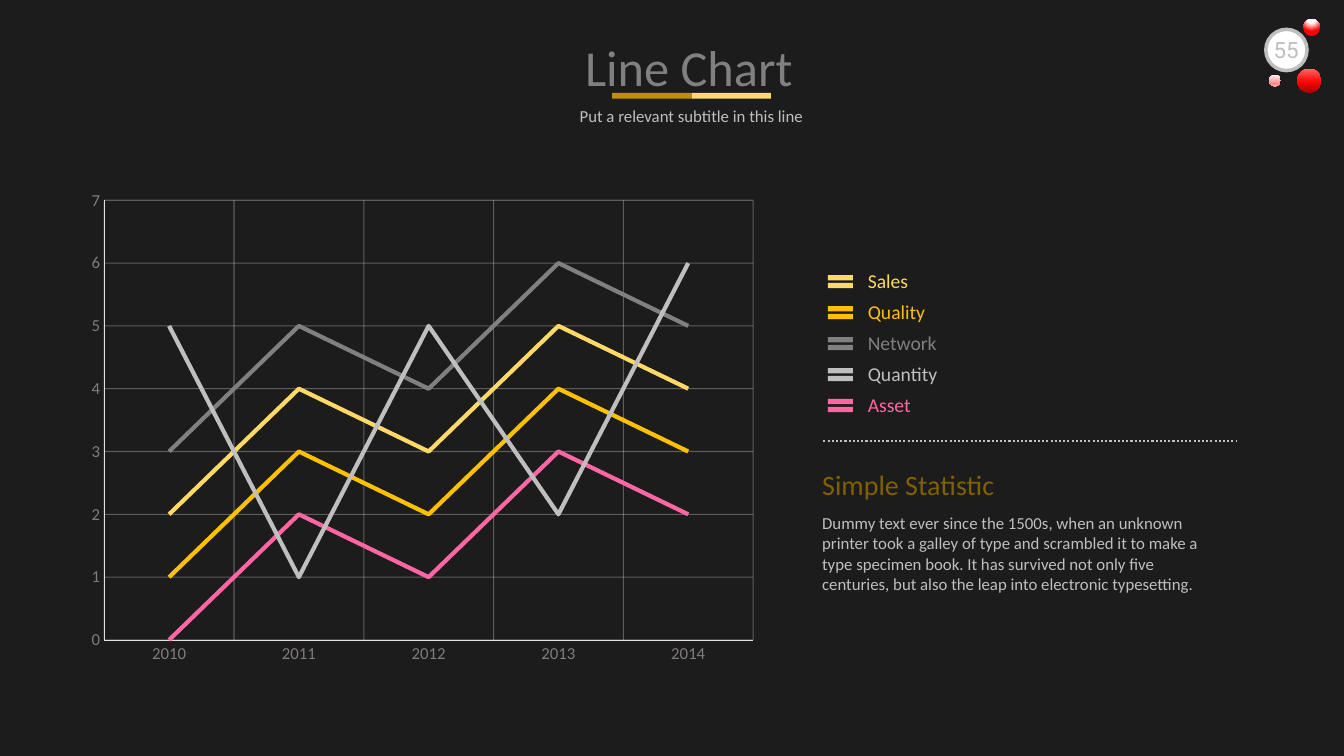
"""Build a dark line chart slide with a colour key and a short text."""
from lxml.etree import SubElement
from pptx import Presentation
from pptx.chart.data import CategoryChartData as ChartData
from pptx.dml.color import RGBColor as RGB
from pptx.enum.chart import XL_CHART_TYPE as Kind, XL_TICK_MARK as Tick
from pptx.enum.dml import MSO_LINE as Dash
from pptx.enum.shapes import MSO_CONNECTOR as Link, MSO_SHAPE as Form
from pptx.enum.text import MSO_ANCHOR as Anchor, MSO_AUTO_SIZE as Auto, PP_ALIGN as Align
from pptx.oxml import parse_xml
from pptx.oxml.ns import nsdecls, qn
from pptx.util import Cm, Pt

HUES = {
    "back": "1D1C1C", "white": "FFFFFF", "axis": "E2E1E1", "label": "817C7C",
    "gold": "FFC000", "yellow": "FFD966", "gray": "808080", "pink": "FF66A3",
    "silver": "BFBFBF", "ochre": "BF9000", "brown": "806000",
}


def hue(name):
    return RGB.from_string(HUES[name])


def write(box, text, size=12, color="silver", font="Calibri", align=Align.LEFT,
          anchor=Anchor.TOP, space=None, before=0, after=0):
    frame = box.text_frame
    frame.word_wrap = True
    frame.auto_size = Auto.NONE
    frame.vertical_anchor = anchor
    para = frame.paragraphs[-1]
    if para.runs:
        para = frame.add_paragraph()
    para.alignment = align
    para.line_spacing = space
    para.space_before, para.space_after = Pt(before), Pt(after)
    run = para.add_run()
    run.text = text
    run.font.size, run.font.name = Pt(size), font
    run.font.color.rgb = hue(color)


deck = Presentation()
deck.slide_width, deck.slide_height = Cm(33.87), Cm(19.05)
slide = deck.slides.add_slide(deck.slide_layouts[5])
slide.background.fill.solid()
slide.background.fill.fore_color.rgb = hue("back")
shapes = slide.shapes

title = shapes.title
title.left, title.top, title.width, title.height = Cm(10.11), Cm(0.03), Cm(14.5), Cm(2.57)
write(title, "Line Chart", size=36, color="gray", align=Align.CENTER, space=1.5)
box = shapes.add_textbox(Cm(13.41), Cm(2.41), Cm(8.03), Cm(1.02))
write(box, "Put a relevant subtitle in this line", align=Align.CENTER, anchor=Anchor.MIDDLE)

for col, color in enumerate(("ochre", "yellow")):
    bar = shapes.add_shape(Form.RECTANGLE, Cm(15.43 + 2 * col), Cm(2.34), Cm(2), Cm(0.15))
    bar.shadow.inherit = False
    bar.fill.solid()
    bar.fill.fore_color.rgb = hue(color)
    bar.line.fill.background()

lines = [
    ("gold", (1, 3, 2, 4, 3)),
    ("yellow", (2, 4, 3, 5, 4)),
    ("gray", (3, 5, 4, 6, 5)),
    ("pink", (0, 2, 1, 3, 2)),
    ("silver", (5, 1, 5, 2, 6)),
]
data = ChartData()
data.categories = ["2010", "2011", "2012", "2013", "2014"]
for num, (color, vals) in enumerate(lines, 1):
    data.add_series(f"Series {num}", vals)
chart = shapes.add_chart(Kind.LINE, Cm(1.93), Cm(4.55), Cm(17.4), Cm(12.45), data).chart
chart.has_title = chart.has_legend = False
chart.font.size, chart.font.name = Pt(10), "Calibri"
for series, (color, vals) in zip(chart.plots[0].series, lines):
    series.smooth = False
    series.format.line.width = Pt(3)
    series.format.line.color.rgb = hue(color)

chart.value_axis.minimum_scale, chart.value_axis.maximum_scale = 0, 7
chart.value_axis.major_unit = 1
for axis in (chart.category_axis, chart.value_axis):
    axis.major_tick_mark = axis.minor_tick_mark = Tick.NONE
    axis.has_major_gridlines = True
    font = axis.tick_labels.font
    font.size, font.name = Pt(12), "Calibri"
    font.color.rgb = hue("label")
    for part, width in ((axis, 0.25), (axis.major_gridlines, 0.75)):
        part.format.line.width = Pt(width)
        part.format.line.color.rgb = hue("axis")
for grid in chart.element.iter(qn("c:majorGridlines")):
    for tint in grid.iter(qn("a:srgbClr")):
        SubElement(tint, qn("a:alpha"), val="32000")

plot = next(chart.element.iter(qn("c:plotArea")))
for old in plot.findall(qn("c:layout")):
    plot.remove(old)
place = {"x": 0.04, "y": 0.04, "w": 0.94, "h": 0.89}
sides = "".join(f'<c:{key} val="{val}"/>' for key, val in place.items())
plot.insert(0, parse_xml(
    f'<c:layout {nsdecls("c")}><c:manualLayout><c:layoutTarget val="inner"/>'
    f'<c:xMode val="edge"/><c:yMode val="edge"/>{sides}</c:manualLayout></c:layout>'))

keys = [("Sales", "yellow"), ("Quality", "gold"), ("Network", "gray"),
        ("Quantity", "silver"), ("Asset", "pink")]
for row, (name, color) in enumerate(keys):
    top = 6.65 + 0.78 * row
    sign = shapes.add_shape(Form.MATH_EQUAL, Cm(20.75), Cm(top + 0.17), Cm(0.86), Cm(0.56))
    sign.shadow.inherit = False
    sign.fill.solid()
    sign.fill.fore_color.rgb = hue(color)
    sign.line.fill.background()
    box = shapes.add_textbox(Cm(21.62), Cm(top), Cm(3.4), Cm(0.86))
    write(box, name, size=14, color=color)

rule = shapes.add_connector(Link.STRAIGHT, Cm(20.75), Cm(11.12), Cm(31.14), Cm(11.12))
rule.line.width = Pt(1.5)
rule.line.color.rgb = hue("silver")
rule.line.dash_style = Dash.ROUND_DOT
SubElement(rule.element.spPr, qn("a:effectLst"))

box = shapes.add_textbox(Cm(20.47), Cm(11.66), Cm(10.67), Cm(4.45))
write(box, "Simple Statistic", size=20, color="brown", after=6)
write(box, "Dummy text ever since the 1500s, when an unknown printer took a galley of type "
      "and scrambled it to make a type specimen book. It has survived not only five "
      "centuries, but also the leap into electronic typesetting.", before=2.4, after=6)

badge = shapes.add_shape(Form.OVAL, Cm(31.9), Cm(0.74), Cm(1.04), Cm(1.04))
badge.shadow.inherit = False
badge.fill.solid()
badge.fill.fore_color.rgb = hue("white")
badge.line.width = Pt(2.5)
badge.line.color.rgb = hue("silver")

glow = ('<a:path path="circle"><a:fillToRect l="50000" t="-80000" r="50000" b="180000"/>'
        '</a:path>')
rise, fall = '<a:lin ang="16200000"/>', '<a:lin ang="5400000"/>'
balls = [
    (32.84, 0.48, 0.43, glow, ((0, "FFFFFF"), (35, "FFFFFF"), (100, "FF0000"))),
    (32.69, 1.73, 0.61, rise, ((0, "AB0000"), (48, "FF0808"), (100, "FF6666"))),
    (31.98, 1.88, 0.3, fall,
     ((0, "FFF2F2"), (74, "FF8C8C"), (83, "FF8C8C"), (100, "FFB2B2"))),
]
for left, top, size, way, stops in balls:
    ball = shapes.add_shape(Form.OVAL, Cm(left), Cm(top), Cm(size), Cm(size))
    ball.shadow.inherit = False
    ball.line.fill.background()
    marks = "".join(f'<a:gs pos="{pos * 1000}"><a:srgbClr val="{tint}"/></a:gs>'
                    for pos, tint in stops)
    ball.element.spPr.find(qn("a:prstGeom")).addnext(parse_xml(
        f'<a:gradFill {nsdecls("a")}><a:gsLst>{marks}</a:gsLst>{way}</a:gradFill>'))

box = shapes.add_textbox(Cm(31.78), Cm(0.79), Cm(1.27), Cm(0.94))
write(box, "55", size=16, font="Roboto", align=Align.CENTER)

deck.save("out.pptx")
